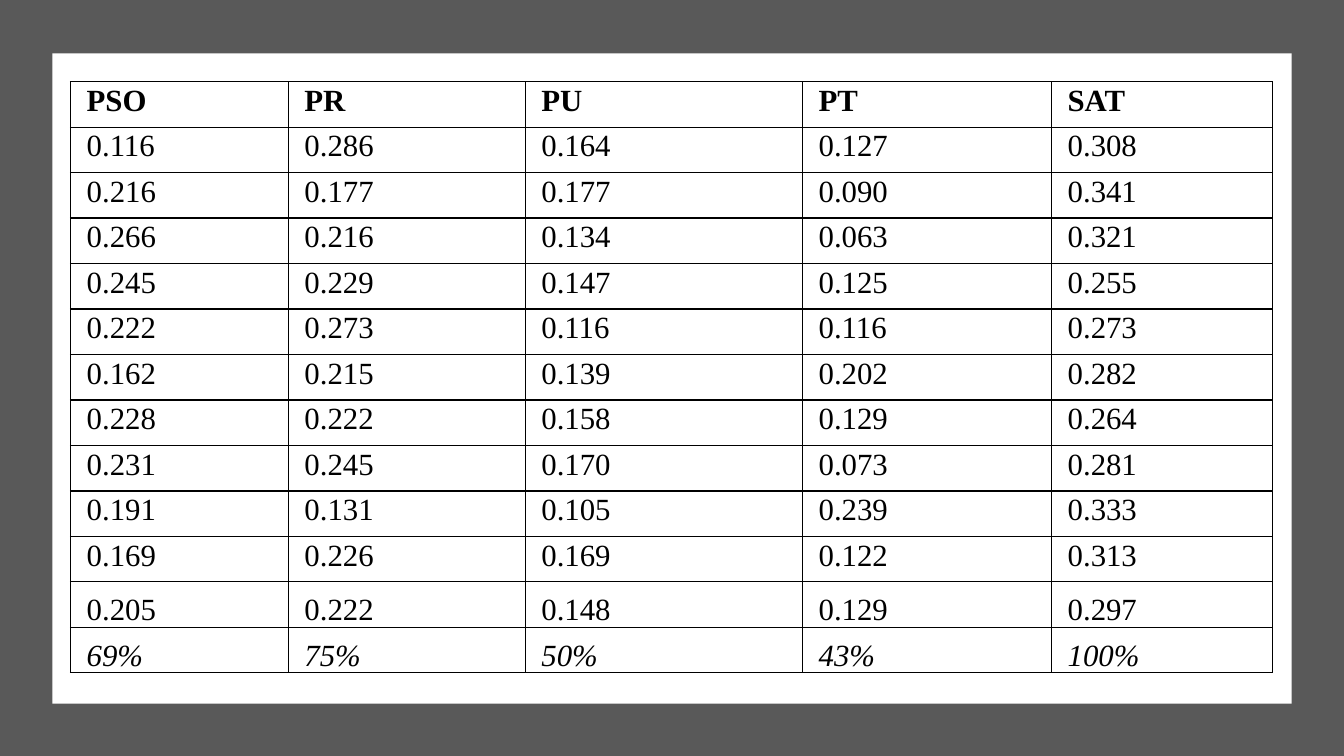
from lxml.etree import SubElement
from pptx import Presentation
from pptx.dml.color import RGBColor
from pptx.enum.shapes import MSO_SHAPE
from pptx.enum.text import MSO_ANCHOR
from pptx.oxml.ns import qn
from pptx.util import Inches, Pt

GRAY = RGBColor(0x59, 0x59, 0x59)
WHITE = RGBColor(0xFF, 0xFF, 0xFF)
BLACK = RGBColor(0x00, 0x00, 0x00)

WIDTHS = [2.16, 2.35, 2.75, 2.47, 2.19]
ROWS = [
    ["PSO", "PR", "PU", "PT", "SAT"],
    ["0.116", "0.286", "0.164", "0.127", "0.308"],
    ["0.216", "0.177", "0.177", "0.090", "0.341"],
    ["0.266", "0.216", "0.134", "0.063", "0.321"],
    ["0.245", "0.229", "0.147", "0.125", "0.255"],
    ["0.222", "0.273", "0.116", "0.116", "0.273"],
    ["0.162", "0.215", "0.139", "0.202", "0.282"],
    ["0.228", "0.222", "0.158", "0.129", "0.264"],
    ["0.231", "0.245", "0.170", "0.073", "0.281"],
    ["0.191", "0.131", "0.105", "0.239", "0.333"],
    ["0.169", "0.226", "0.169", "0.122", "0.313"],
    ["0.205", "0.222", "0.148", "0.129", "0.297"],
    ["69%", "75%", "50%", "43%", "100%"],
]


class SlideBuilder:
    font = "Times New Roman"
    size = Pt(22)
    inset = Inches(0.16)
    border = Pt(1)

    def __init__(self, prs):
        self.s = prs.slides.add_slide(prs.slide_layouts[6])

    def panel(self, x, y, w, h, color):
        sp = self.s.shapes.add_shape(
            MSO_SHAPE.RECTANGLE, Inches(x), Inches(y), Inches(w), Inches(h))
        sp.shadow.inherit = False
        sp.fill.solid()
        sp.fill.fore_color.rgb = color
        sp.line.fill.background()

    def table(self, x, y, h, widths, rows):
        frame = self.s.shapes.add_table(
            len(rows), len(widths), Inches(x), Inches(y),
            Inches(sum(widths)), Inches(h))
        tbl = frame.table
        tbl.first_row = False
        tbl.horz_banding = False
        for column, width in zip(tbl.columns, widths):
            column.width = Inches(width)
        last = len(rows) - 1
        for i, values in enumerate(rows):
            for j, value in enumerate(values):
                self.cell(tbl.cell(i, j), value, bold=i == 0,
                          italic=i == last, bottom=i >= last - 1)

    def cell(self, cell, value, bold, italic, bottom):
        cell.margin_left = cell.margin_right = self.inset
        cell.margin_top = cell.margin_bottom = 0
        cell.vertical_anchor = MSO_ANCHOR.BOTTOM if bottom else MSO_ANCHOR.TOP
        p = cell.text_frame.paragraphs[0]
        p.text = value
        p.line_spacing = 1.07
        p.space_after = Pt(8)
        font = p.runs[0].font
        font.name = self.font
        font.size = self.size
        font.bold = bold
        font.italic = italic
        font.color.rgb = BLACK
        self.borders(cell)
        cell.fill.background()

    def borders(self, cell):
        props = cell._tc.get_or_add_tcPr()
        for side in ("lnL", "lnR", "lnT", "lnB"):
            line = SubElement(props, qn(f"a:{side}"), w=str(self.border))
            fill = SubElement(line, qn("a:solidFill"))
            SubElement(fill, qn("a:srgbClr"), val=str(BLACK))


def main():
    prs = Presentation()
    prs.slide_width = Inches(13.33)
    prs.slide_height = Inches(7.5)
    slide = SlideBuilder(prs)
    slide.panel(0, 0, 13.33, 7.5, GRAY)
    slide.panel(0.52, 0.53, 12.29, 6.45, WHITE)
    slide.table(0.7, 0.81, 5.87, WIDTHS, ROWS)
    prs.save("out.pptx")


if __name__ == "__main__":
    main()
